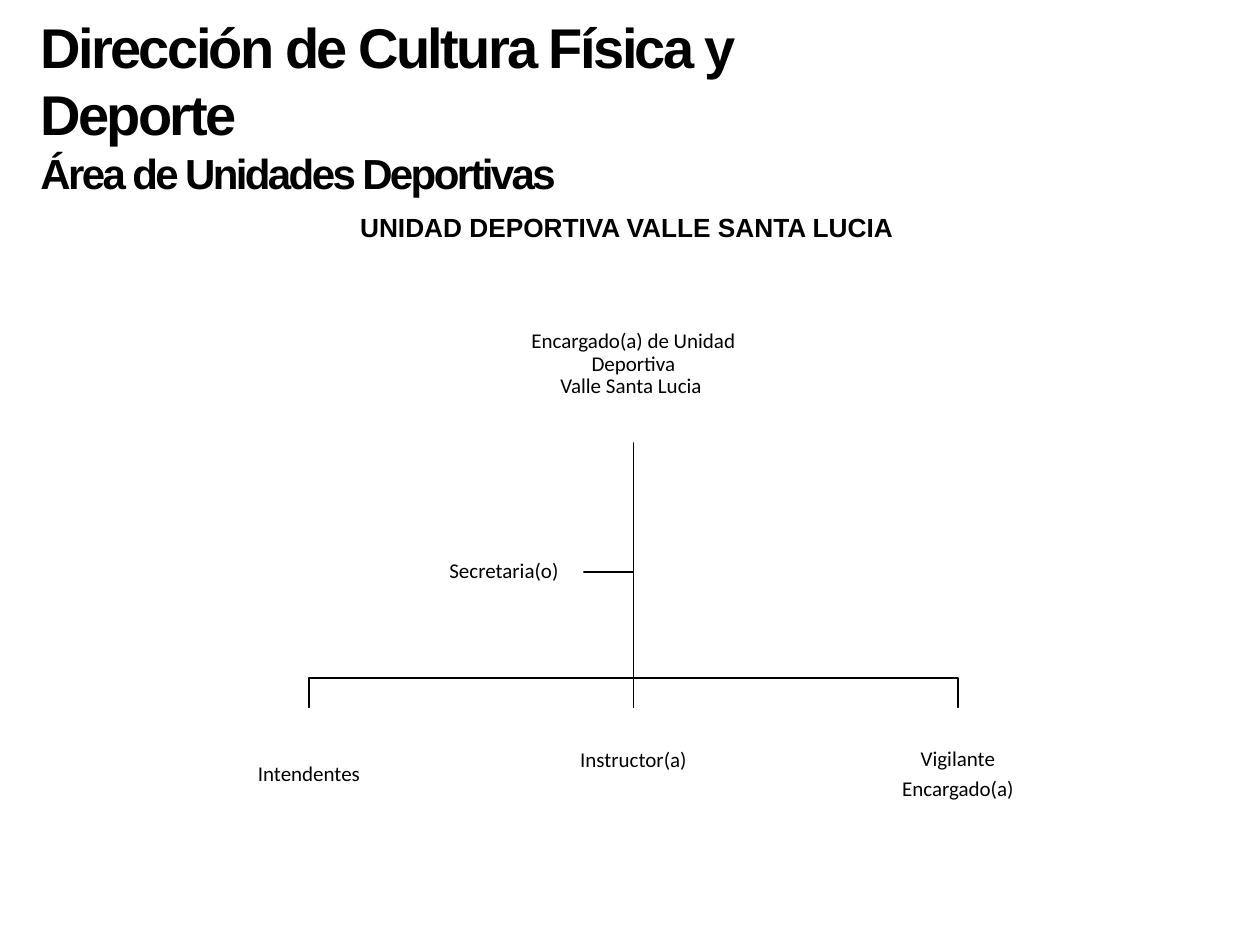
from pptx import Presentation
from pptx.dml.color import RGBColor
from pptx.enum.shapes import MSO_SHAPE
from pptx.enum.text import MSO_ANCHOR, MSO_AUTO_SIZE, PP_ALIGN
from pptx.util import Cm, Pt

BLACK = RGBColor(0, 0, 0)
WHITE = RGBColor(255, 255, 255)
RECT = MSO_SHAPE.RECTANGLE
TOP, MIDDLE = MSO_ANCHOR.TOP, MSO_ANCHOR.MIDDLE
LEFT, CENTER = PP_ALIGN.LEFT, PP_ALIGN.CENTER
NO_FIT, GROW = MSO_AUTO_SIZE.NONE, MSO_AUTO_SIZE.SHAPE_TO_FIT_TEXT

deck = Presentation()
deck.slide_width, deck.slide_height = Cm(25.4), Cm(19.05)
slide = deck.slides.add_slide(deck.slide_layouts[5])
shapes = slide.shapes


def add_run(para, text, size, font, bold=False):
    run = para.add_run()
    run.text = text
    run.font.size, run.font.name, run.font.bold = Pt(size), font, bold
    run.font.color.rgb = BLACK
    return run


def add_box(mid, top, width, height, paras, lift=0):
    box = shapes.add_shape(RECT, Cm(mid - width / 2), Cm(top), Cm(width), Cm(height))
    box.shadow.inherit = False
    box.fill.solid()
    box.fill.fore_color.rgb = WHITE
    box.line.fill.background()
    frame = box.text_frame
    frame.word_wrap, frame.vertical_anchor = True, MIDDLE
    frame.margin_left = frame.margin_right = frame.margin_top = Cm(0.02)
    frame.margin_bottom = Cm(0.02 + lift)
    for i, lines in enumerate(paras):
        para = frame.add_paragraph() if i else frame.paragraphs[0]
        para.alignment, para.line_spacing, para.space_after = CENTER, 0.9, Pt(4.2)
        for j, line in enumerate(lines):
            if j:
                para.add_line_break()
            add_run(para, line, 12, "Calibri")


# Title, with the area on its second paragraph
title = shapes.title
title.left, title.top, title.width, title.height = Cm(0.56), Cm(0.13), Cm(18.49), Cm(4.01)
frame = title.text_frame
frame.word_wrap, frame.auto_size, frame.vertical_anchor = True, NO_FIT, TOP
for i, (text, size) in enumerate([("Dirección de Cultura Física y Deporte", 32),
                                  ("Área de Unidades Deportivas", 24)]):
    para = frame.add_paragraph() if i else frame.paragraphs[0]
    para.alignment = LEFT
    run = add_run(para, text, size, "Arial", True)
    run.font._element.set("spc", "-150")

# Unit name
unit = shapes.add_textbox(Cm(7.01), Cm(4.14), Cm(11.38), Cm(0.89))
unit.text_frame.word_wrap = False
unit.text_frame.auto_size = GROW
add_run(unit.text_frame.paragraphs[0], "UNIDAD DEPORTIVA VALLE SANTA LUCIA", 15, "Arial", True)

# Chart grid
mid, step = 12.77, 6.54
head, desk, bus, base = 8.92, 11.53, 13.67, 14.27
desk_x, desk_w, desk_h = 10.16, 3.2, 1.73

# Lines from the head of the unit to each post
routes = [
    [(mid, head), (mid, desk), (desk_x + desk_w / 2, desk)],
    [(mid, head), (mid, bus), (mid + step, bus), (mid + step, base)],
    [(mid, head), (mid, base)],
    [(mid, head), (mid, bus), (mid - step, bus), (mid - step, base)],
]
for route in routes:
    points = [(Cm(x), Cm(y)) for x, y in route]
    pen = shapes.build_freeform(*points[0])
    pen.add_line_segments(points[1:], close=False)
    line = pen.convert_to_shape()
    line.shadow.inherit = False
    line.fill.background()
    line.line.color.rgb = BLACK
    line.line.width = Pt(1)

# Posts
add_box(mid, 5.77, 5.8, head - 5.77,
        [["Encargado(a) de Unidad Deportiva", "Valle Santa Lucia "]])
add_box(desk_x, desk - desk_h / 2, desk_w, desk_h, [["Secretaria(o)"]])
posts = [([["Intendentes"]], 0), ([["Instructor(a)"]], 0.56),
         ([["Vigilante"], ["Encargado(a)"]], 0)]
for i, (paras, lift) in enumerate(posts):
    add_box(mid + (i - 1) * step, base, 5.3, 2.69, paras, lift)

deck.save("out.pptx")
